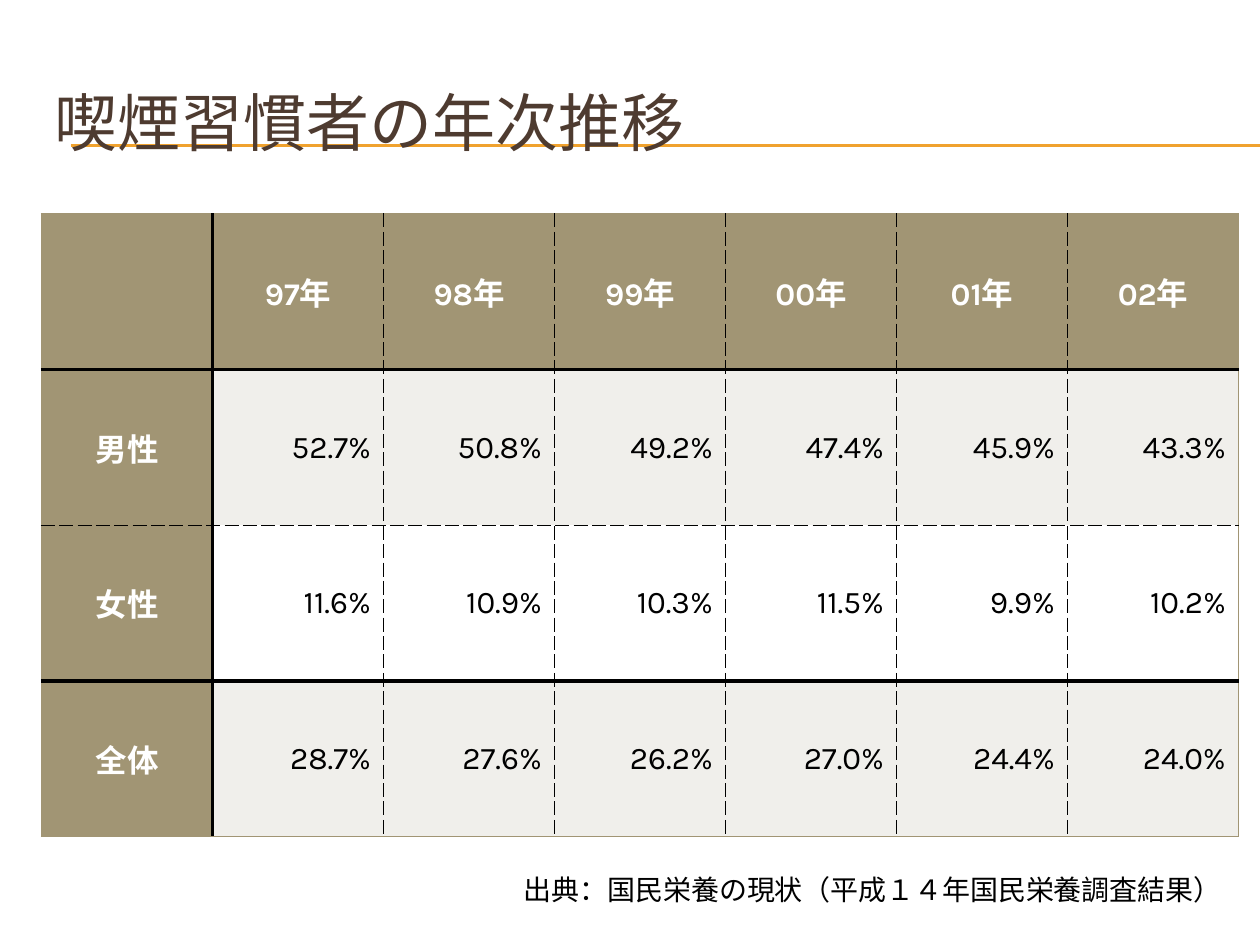
from lxml import etree
from pptx import Presentation
from pptx.dml.color import RGBColor
from pptx.enum.shapes import MSO_CONNECTOR
from pptx.enum.text import MSO_ANCHOR, MSO_AUTO_SIZE, PP_ALIGN
from pptx.oxml.ns import qn
from pptx.util import Inches, Pt

STRAIGHT = MSO_CONNECTOR.STRAIGHT
MIDDLE = MSO_ANCHOR.MIDDLE
GROW = MSO_AUTO_SIZE.SHAPE_TO_FIT_TEXT
LEFT, CENTER, RIGHT = PP_ALIGN.LEFT, PP_ALIGN.CENTER, PP_ALIGN.RIGHT

FONT = "Karla"
TAN, PALE, WHITE, BLACK = "A19574", "F0EFEB", "FFFFFF", "000000"
BROWN, GOLD = "4E3B30", "F0A22E"

FRAME = (TAN, 1, "solid")
THICK = (BLACK, 2.25, "solid")
DASH = (BLACK, 1, "dash")

ROWS = [
    ["", "97年", "98年", "99年", "00年", "01年", "02年"],
    ["男性", "52.7%", "50.8%", "49.2%", "47.4%", "45.9%", "43.3%"],
    ["女性", "11.6%", "10.9%", "10.3%", "11.5%", "9.9%", "10.2%"],
    ["全体", "28.7%", "27.6%", "26.2%", "27.0%", "24.4%", "24.0%"],
]
ROW_EDGES = [FRAME, THICK, DASH, THICK, FRAME]
COL_EDGES = [FRAME, THICK] + [DASH] * 5 + [FRAME]


def color(text):
    """Turn a hex string into a colour."""
    return RGBColor.from_string(text)


def add_text(frame, text, size, tint, bold=False, align=LEFT):
    """Write one run into the first paragraph of a frame."""
    para = frame.paragraphs[0]
    para.alignment = align
    run = para.add_run()
    run.text = text
    run.font.name = FONT
    run.font.size = Pt(size)
    run.font.bold = bold
    run.font.color.rgb = color(tint)


def add_rule(slide, top):
    """Draw a thin gold rule that runs to the right edge."""
    rule = slide.shapes.add_connector(
        STRAIGHT, Inches(0.56), Inches(top), Inches(10), Inches(top))
    rule.line.color.rgb = color(GOLD)
    rule.line.width = Pt(0.75)
    etree.SubElement(rule._element.spPr, qn("a:effectLst"))


def add_title(slide, text):
    """Place the title in front of the rules."""
    title = slide.shapes.title
    title.left, title.top = Inches(0.33), Inches(0.5)
    title.width, title.height = Inches(9.5), Inches(0.92)
    title.text_frame.vertical_anchor = MIDDLE
    add_text(title.text_frame, text, 36, BROWN)
    slide.shapes._spTree.append(title._element)


def add_edge(cell, side, edge):
    """Add one border line to a cell."""
    tint, width, dash = edge
    line = etree.SubElement(
        cell._tc.get_or_add_tcPr(), qn(f"a:ln{side}"), w=str(Pt(width)))
    fill = etree.SubElement(line, qn("a:solidFill"))
    etree.SubElement(fill, qn("a:srgbClr"), val=tint)
    etree.SubElement(line, qn("a:prstDash"), val=dash)


def fill_cell(cell, row, col):
    """Set the borders, fill and text of a cell by its place."""
    add_edge(cell, "L", COL_EDGES[col])
    add_edge(cell, "R", COL_EDGES[col + 1])
    add_edge(cell, "T", ROW_EDGES[row])
    add_edge(cell, "B", ROW_EDGES[row + 1])
    head = row == 0 or col == 0
    cell.fill.solid()
    cell.fill.fore_color.rgb = color(
        TAN if head else PALE if row % 2 else WHITE)
    cell.vertical_anchor = MIDDLE
    add_text(cell.text_frame, ROWS[row][col], 18,
             WHITE if head else BLACK, head, CENTER if head else RIGHT)


def add_rates(slide):
    """Add the table of smoking rates."""
    table = slide.shapes.add_table(
        len(ROWS), len(ROWS[0]), Inches(0.33), Inches(1.7),
        Inches(9.5), Inches(4.94)).table
    for row, texts in enumerate(ROWS):
        for col in range(len(texts)):
            fill_cell(table.cell(row, col), row, col)


def add_source(slide, text):
    """Add the source note below the table."""
    box = slide.shapes.add_textbox(
        Inches(4.06), Inches(6.88), Inches(5.78), Inches(0.37))
    box.text_frame.word_wrap = True
    box.text_frame.auto_size = GROW
    add_text(box.text_frame, text, 16, BLACK)


def main():
    """Build and save the slide."""
    deck = Presentation()
    deck.slide_width, deck.slide_height = Inches(10), Inches(7.5)
    slide = deck.slides.add_slide(deck.slide_layouts[5])
    for top in (1.15, 1.16):
        add_rule(slide, top)
    add_title(slide, "喫煙習慣者の年次推移")
    add_rates(slide)
    add_source(slide, "出典：国民栄養の現状（平成１４年国民栄養調査結果）")
    deck.save("out.pptx")


if __name__ == "__main__":
    main()
